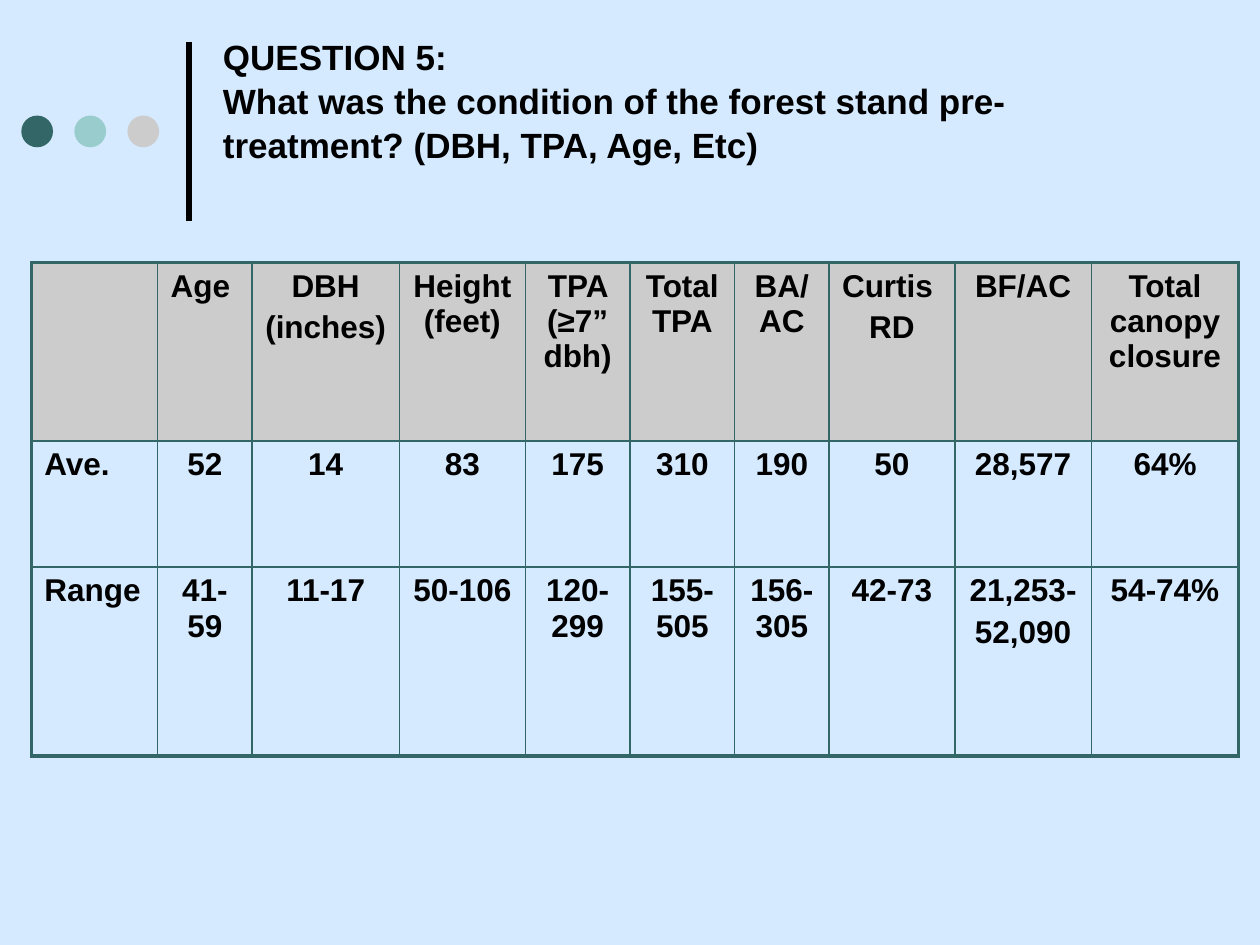
from lxml import etree
from pptx import Presentation
from pptx.dml.color import RGBColor
from pptx.enum.shapes import MSO_CONNECTOR, MSO_SHAPE
from pptx.enum.text import MSO_ANCHOR, MSO_AUTO_SIZE, PP_ALIGN
from pptx.oxml.ns import qn
from pptx.util import Cm, Pt

LINE = MSO_CONNECTOR.STRAIGHT
OVAL = MSO_SHAPE.OVAL
TOP = MSO_ANCHOR.TOP
FIXED = MSO_AUTO_SIZE.NONE
LEFT, MID = PP_ALIGN.LEFT, PP_ALIGN.CENTER

SKY = RGBColor(0xD5, 0xEA, 0xFF)
BLACK = RGBColor(0, 0, 0)
TEAL = RGBColor(0x33, 0x66, 0x66)
MINT = RGBColor(0x99, 0xCC, 0xCC)
GRAY = RGBColor(0xCC, 0xCC, 0xCC)

FACE = "Arial"
THIN, THICK = Pt(1), Pt(2.25)

TITLE = ("QUESTION 5:\vWhat was the condition of the forest stand "
         "pre-treatment? (DBH, TPA, Age, Etc)")
WIDTHS = [2.54, 1.9, 2.97, 2.54, 2.11, 2.11, 1.9, 2.54, 2.75, 2.97]
HEIGHTS = [3.6, 2.54, 3.81]
# A line break inside a value starts a new paragraph
ROWS = [
    ["", "Age ", "DBH\n(inches)", "Height (feet)", "TPA (≥7” dbh)",
     "Total TPA", "BA/ AC", "Curtis \nRD", "BF/AC", "Total canopy closure"],
    ["Ave.", "52", "14", "83", "175", "310", "190", "50", "28,577", "64%"],
    ["Range", "41-59", "11-17", "50-106", "120-299", "155-505", "156-305",
     "42-73", "21,253-\n52,090", "54-74%"],
]


def set_font(para, size):
    font = para.font
    font.name, font.size, font.bold = FACE, Pt(size), True
    font.color.rgb = BLACK


def add_title(slide):
    title = slide.shapes.title
    title.left, title.top = Cm(4.24), Cm(0.53)
    title.width, title.height = Cm(19.48), Cm(3.71)
    frame = title.text_frame
    frame.auto_size, frame.word_wrap = FIXED, True
    frame.vertical_anchor, frame.margin_top = TOP, Cm(0.16)
    frame.text = TITLE
    para = frame.paragraphs[0]
    para.alignment, para.line_spacing = LEFT, 1.04
    set_font(para, 20)


def add_rule(slide):
    rule = slide.shapes.add_connector(LINE, Cm(3.81), Cm(4.45), Cm(3.81), Cm(0.84))
    rule.line.color.rgb, rule.line.width = BLACK, Pt(3)
    etree.SubElement(rule._element.spPr, qn("a:effectLst"))


def add_dots(slide):
    for i, color in enumerate((TEAL, MINT, GRAY)):
        dot = slide.shapes.add_shape(
            OVAL, Cm(0.43 + 1.07 * i), Cm(2.33), Cm(0.64), Cm(0.64))
        dot.shadow.inherit = False
        dot.fill.solid()
        dot.fill.fore_color.rgb = color
        dot.line.fill.background()


def set_edge(cell, side, width):
    props = cell._tc.get_or_add_tcPr()
    edge = etree.SubElement(props, qn("a:ln" + side), w=str(width))
    fill = etree.SubElement(edge, qn("a:solidFill"))
    etree.SubElement(fill, qn("a:srgbClr"), val=str(TEAL))


def fill_cell(cell, text, align):
    cell.text = text
    for i, para in enumerate(cell.text_frame.paragraphs):
        para.alignment = align
        if i:
            para.space_before = Pt(3.6)
        set_font(para, 18)


def add_grid(slide):
    rows, cols = len(HEIGHTS), len(WIDTHS)
    table = slide.shapes.add_table(
        rows, cols, Cm(0.64), Cm(5.29), Cm(sum(WIDTHS)), Cm(sum(HEIGHTS))).table
    table.horz_banding = False
    for col, width in zip(table.columns, WIDTHS):
        col.width = Cm(width)
    for row, height in zip(table.rows, HEIGHTS):
        row.height = Cm(height)
    for r, values in enumerate(ROWS):
        for c, text in enumerate(values):
            cell = table.cell(r, c)
            fill_cell(cell, text, MID if c else LEFT)
            # Outer edges are thick; edges come before the fill
            outer = {"L": c == 0, "R": c == cols - 1,
                     "T": r == 0, "B": r == rows - 1}
            for side, thick in outer.items():
                set_edge(cell, side, THICK if thick else THIN)
            if r == 0:
                cell.fill.solid()
                cell.fill.fore_color.rgb = GRAY
            else:
                cell.fill.background()


def main():
    deck = Presentation()
    deck.slide_width, deck.slide_height = Cm(25.4), Cm(19.05)
    slide = deck.slides.add_slide(deck.slide_layouts[5])
    slide.background.fill.solid()
    slide.background.fill.fore_color.rgb = SKY
    # Heading
    add_rule(slide)
    add_dots(slide)
    add_title(slide)
    # Stand data
    add_grid(slide)
    deck.save("out.pptx")


if __name__ == "__main__":
    main()
